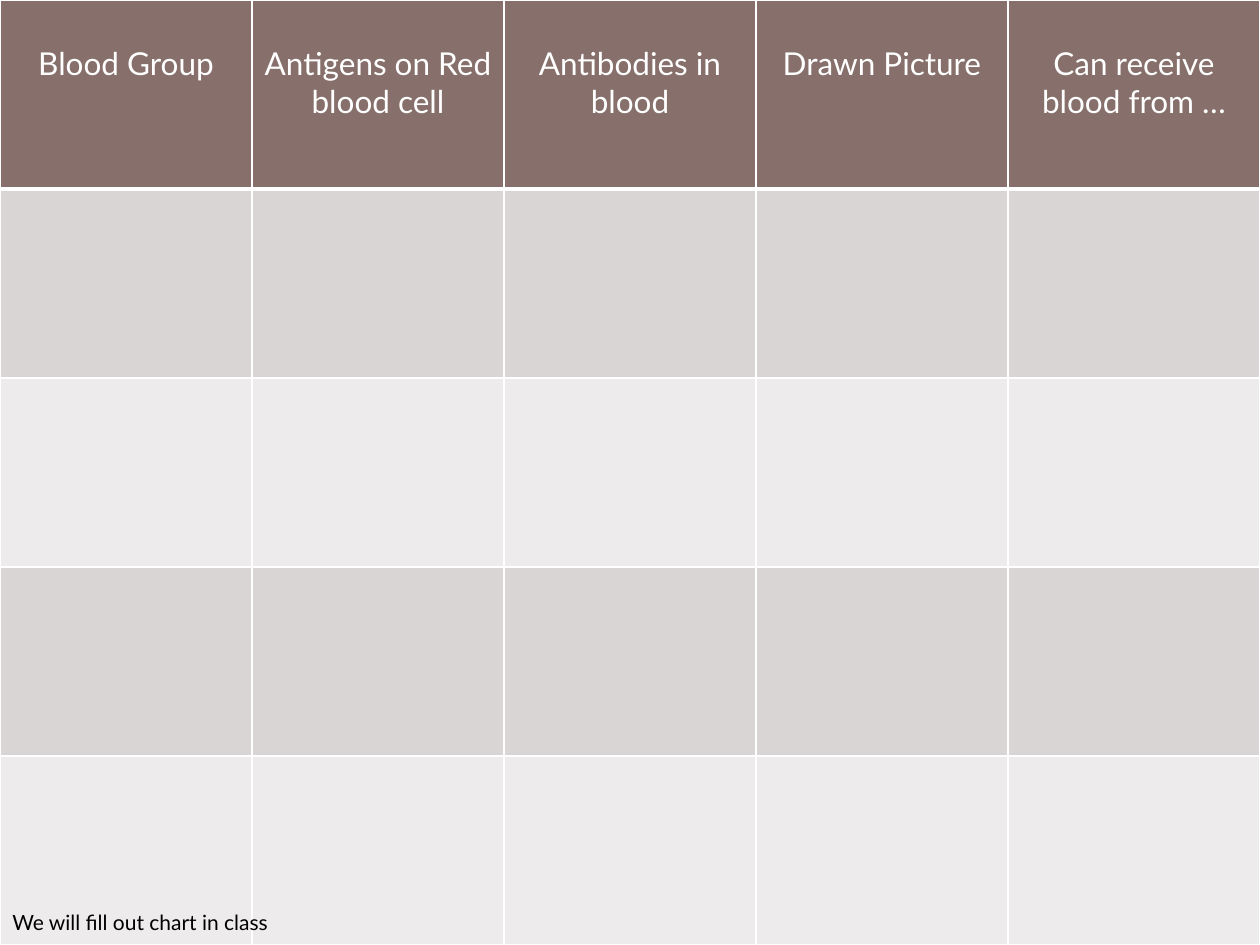
"""Build a blood group worksheet slide with a table to fill in."""
from dataclasses import dataclass

from lxml import etree
from pptx import Presentation
from pptx.dml.color import RGBColor
from pptx.enum.text import MSO_AUTO_SIZE, PP_ALIGN
from pptx.oxml.ns import qn
from pptx.util import Inches, Pt

CENTER = PP_ALIGN.CENTER
GROW = MSO_AUTO_SIZE.SHAPE_TO_FIT_TEXT
BLANK_LAYOUT = 6
HEADINGS = (
    "Blood Group",
    "Antigens on Red blood cell",
    "Antibodies in blood",
    "Drawn Picture",
    "Can receive blood from …",
)
GROUP_ROWS = 4


@dataclass(frozen=True)
class Theme:
    """Colours, font and sizes of the worksheet."""
    font: str = "Lato"
    header: str = "87706B"
    bands: tuple = ("D9D5D4", "EDEBEB")
    grid: str = "FFFFFF"
    heading_text: str = "FFFFFF"
    note_text: str = "000000"
    heading_size: int = 18
    note_size: int = 12
    grid_width: int = 1
    header_rule: int = 3


THEME = Theme()


def add_run(paragraph, text, size, color):
    """Add one formatted run to a paragraph."""
    run = paragraph.add_run()
    run.text = text
    run.font.name = THEME.font
    run.font.size = Pt(size)
    run.font.bold = False
    run.font.color.rgb = RGBColor.from_string(color)


def style_cell(cell, fill, bottom_width):
    """Give a cell its grid lines and its fill."""
    properties = cell._tc.get_or_add_tcPr()
    for side in "LRTB":
        width = bottom_width if side == "B" else THEME.grid_width
        line = etree.SubElement(properties, qn(f"a:ln{side}"), w=str(Pt(width)))
        paint = etree.SubElement(line, qn("a:solidFill"))
        etree.SubElement(paint, qn("a:srgbClr"), val=THEME.grid)
    cell.fill.solid()
    cell.fill.fore_color.rgb = RGBColor.from_string(fill)


def add_worksheet(slide, width, height):
    """Add the table with its headings and empty banded rows."""
    worksheet = slide.shapes.add_table(
        GROUP_ROWS + 1, len(HEADINGS), 0, 0, width, height
    ).table
    for column, heading in enumerate(HEADINGS):
        header_cell = worksheet.cell(0, column)
        style_cell(header_cell, THEME.header, THEME.header_rule)
        header_cell.margin_top = Inches(0.35)
        paragraph = header_cell.text_frame.paragraphs[0]
        paragraph.alignment = CENTER
        add_run(paragraph, heading, THEME.heading_size, THEME.heading_text)
        for row in range(1, GROUP_ROWS + 1):
            band = THEME.bands[(row - 1) % len(THEME.bands)]
            style_cell(worksheet.cell(row, column), band, THEME.grid_width)


def add_note(slide, text):
    """Add the note at the foot of the slide."""
    note = slide.shapes.add_textbox(0, Inches(7.17), Inches(8.25), Inches(0.3))
    frame = note.text_frame
    frame.word_wrap = True
    frame.auto_size = GROW
    add_run(frame.paragraphs[0], text, THEME.note_size, THEME.note_text)


def main():
    """Build and save the slide."""
    deck = Presentation()
    deck.slide_width = Inches(10)
    deck.slide_height = Inches(7.5)
    slide = deck.slides.add_slide(deck.slide_layouts[BLANK_LAYOUT])
    add_worksheet(slide, deck.slide_width, deck.slide_height)
    add_note(slide, "We will fill out chart in class")
    deck.save("out.pptx")


if __name__ == "__main__":
    main()
